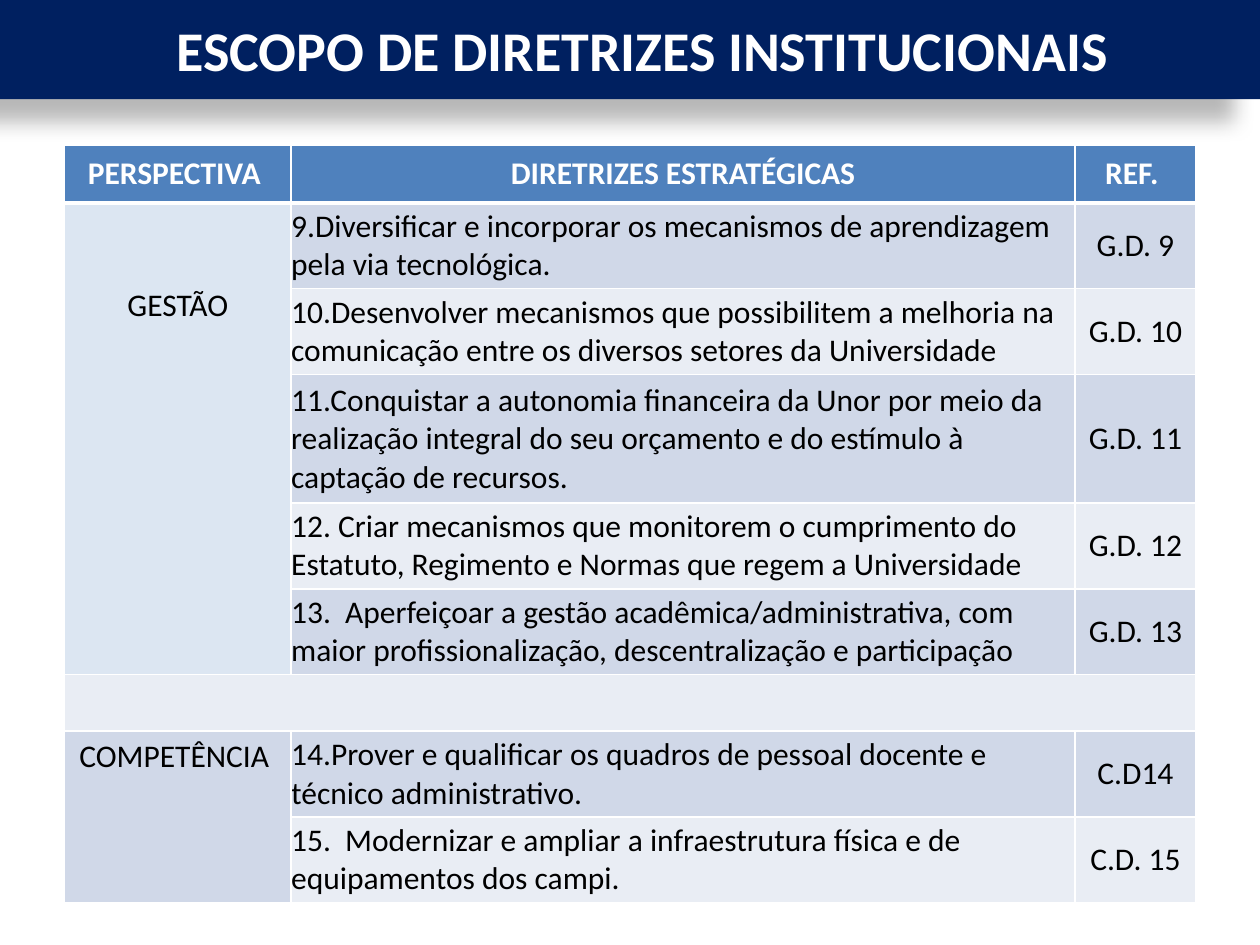
"""Builds the slide on institutional guidelines."""
from lxml.etree import SubElement
from pptx import Presentation
from pptx.dml.color import RGBColor
from pptx.enum.shapes import MSO_SHAPE
from pptx.enum.text import MSO_ANCHOR, PP_ALIGN
from pptx.oxml.ns import qn
from pptx.util import Cm, Pt

NAVY, WHITE, BLACK = "002060", "FFFFFF", "000000"
HEADER, GESTAO = "4F81BD", "DCE6F2"
BANDS = ("D0D8E8", "E9EDF4")
COLUMN_WIDTHS = (4.57, 15.8, 2.44)
ROW_HEIGHTS = (1.17, 1.73, 1.73, 2.59, 1.73, 1.73, 1.14, 1.73, 1.73)
HEADINGS = ("PERSPECTIVA ", "DIRETRIZES ESTRATÉGICAS", "REF. ")
GUIDELINES = {
    1: ("9.Diversificar e incorporar os mecanismos de aprendizagem pela via tecnológica.", "G.D. 9"),
    2: ("10.Desenvolver mecanismos que possibilitem a melhoria na comunicação entre os "
        "diversos setores da Universidade", "G.D. 10"),
    3: ("11.Conquistar a autonomia financeira da Unor por meio da realização integral do "
        "seu orçamento e do estímulo à captação de recursos.", "G.D. 11"),
    4: ("12. Criar mecanismos que monitorem o cumprimento do Estatuto, Regimento e Normas "
        "que regem a Universidade", "G.D. 12"),
    5: ("13.  Aperfeiçoar a gestão acadêmica/administrativa, com maior profissionalização, "
        "descentralização e participação", "G.D. 13"),
    7: ("14.Prover e qualificar os quadros de pessoal docente e técnico administrativo.", "C.D14"),
    8: ("15.  Modernizar e ampliar a infraestrutura física e de equipamentos dos campi.", "C.D. 15"),
}


def color(value):
    return RGBColor.from_string(value)


def paint(target, value):
    target.fill.solid()
    target.fill.fore_color.rgb = color(value)


def write(frame, text, size, ink, bold=False, align=PP_ALIGN.CENTER):
    paragraph = frame.paragraphs[0]
    paragraph.text = text
    paragraph.alignment = align
    font = paragraph.font
    font.name, font.size, font.bold = "Calibri", Pt(size), bold
    font.color.rgb = color(ink)


def add_shadow(shape):
    shape.shadow.inherit = False
    effects = shape.element.spPr.find(qn("a:effectLst"))
    shadow = SubElement(effects, qn("a:outerShdw"), blurRad=str(Pt(11.8)), dist=str(Pt(19.7)),
                        dir=str(141 * 60000), algn="tl", rotWithShape="0")
    tint = SubElement(shadow, qn("a:srgbClr"), val=BLACK)
    SubElement(tint, qn("a:alpha"), val="28000")


def add_title(slide, text):
    banner = slide.shapes.add_shape(MSO_SHAPE.RECTANGLE, 0, 0, Cm(25.4), Cm(2))
    paint(banner, NAVY)
    banner.line.fill.background()
    add_shadow(banner)
    frame = banner.text_frame
    frame.word_wrap = True
    frame.vertical_anchor = MSO_ANCHOR.MIDDLE
    frame.margin_left = Cm(0.76)
    write(frame, text, 32, WHITE, bold=True)


def add_borders(cell, bottom):
    properties = cell._tc.get_or_add_tcPr()
    for side, width in (("L", 1), ("R", 1), ("T", 1), ("B", bottom)):
        line = SubElement(properties, qn(f"a:ln{side}"), w=str(Pt(width)))
        fill = SubElement(line, qn("a:solidFill"))
        SubElement(fill, qn("a:srgbClr"), val=WHITE)


def fill_tight(cell, text, ink=BLACK, bold=False, align=PP_ALIGN.CENTER):
    cell.margin_left = cell.margin_right = cell.margin_top = cell.margin_bottom = 0
    cell.vertical_anchor = MSO_ANCHOR.MIDDLE
    write(cell.text_frame, text, 18, ink, bold, align)


def add_guidelines(slide):
    table = slide.shapes.add_table(len(ROW_HEIGHTS), len(COLUMN_WIDTHS), Cm(1.3), Cm(2.92),
                                   Cm(sum(COLUMN_WIDTHS)), Cm(sum(ROW_HEIGHTS))).table
    for column, width in zip(table.columns, COLUMN_WIDTHS):
        column.width = Cm(width)
    for index, (row, height) in enumerate(zip(table.rows, ROW_HEIGHTS)):
        row.height = Cm(height)
        for cell in row.cells:
            add_borders(cell, bottom=1 if index else 3)
            paint(cell, BANDS[(index - 1) % 2] if index else HEADER)

    for cell, heading in zip(table.rows[0].cells, HEADINGS):
        fill_tight(cell, heading, WHITE, bold=True)
    for index, (guideline, reference) in GUIDELINES.items():
        fill_tight(table.cell(index, 1), guideline, align=PP_ALIGN.LEFT)
        fill_tight(table.cell(index, 2), reference)

    gestao, separator, competencia = (table.cell(index, 0) for index in (1, 6, 7))
    gestao.merge(table.cell(5, 0))
    separator.merge(table.cell(6, 2))
    competencia.merge(table.cell(8, 0))
    paint(gestao, GESTAO)
    gestao.margin_top = Cm(1.68)
    write(gestao.text_frame, "GESTÃO", 18, BLACK)
    write(competencia.text_frame, "COMPETÊNCIA ", 18, BLACK)


def main():
    presentation = Presentation()
    presentation.slide_width, presentation.slide_height = Cm(25.4), Cm(19.05)
    slide = presentation.slides.add_slide(presentation.slide_layouts[6])
    add_title(slide, "ESCOPO DE DIRETRIZES INSTITUCIONAIS")
    add_guidelines(slide)
    presentation.save("out.pptx")


if __name__ == "__main__":
    main()
